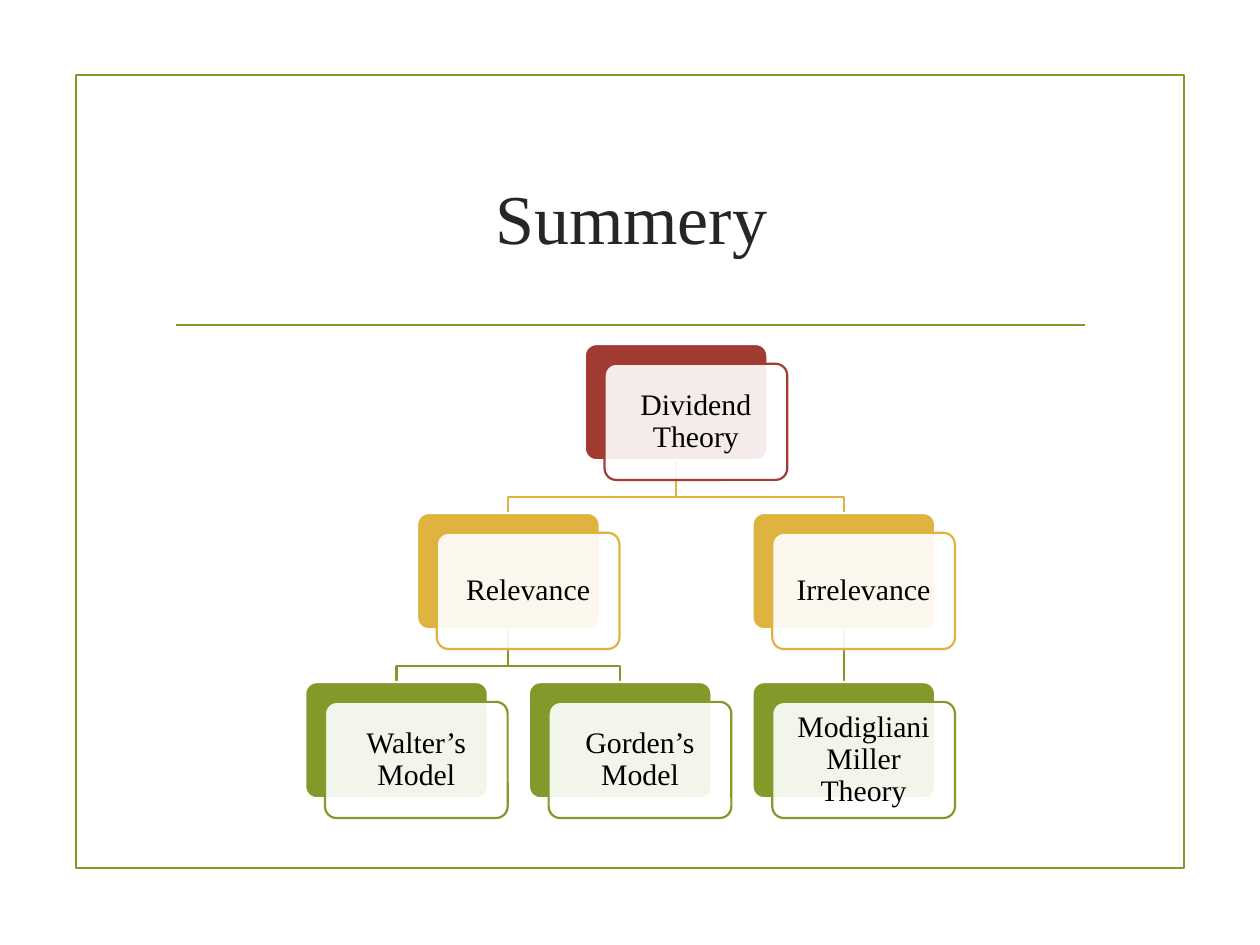
"""Build the summary slide: a tree of dividend theories under a ruled title."""
from lxml import etree
from pptx import Presentation
from pptx.dml.color import RGBColor as RGB
from pptx.enum.shapes import MSO_CONNECTOR as Line, MSO_SHAPE as Shape
from pptx.enum.text import MSO_ANCHOR as Anchor, PP_ALIGN as Align
from pptx.oxml.ns import qn
from pptx.util import Pt


class Theme:
    font = "Times New Roman"
    head, body, line = Pt(40), Pt(17), Pt(1.25)
    ink, text = RGB.from_string("262626"), RGB.from_string("000000")
    white, green = RGB.from_string("FFFFFF"), RGB.from_string("83992A")
    levels = [RGB.from_string("A23C33"), RGB.from_string("DEB340"), green]


def add_box(kind, left, top, wide, high, fill, edge):
    box = slide.shapes.add_shape(kind, Pt(left), Pt(top), Pt(wide), Pt(high))
    box.shadow.inherit = False
    if fill is None:
        box.fill.background()
    else:
        box.fill.solid()
        box.fill.fore_color.rgb = fill
    box.line.color.rgb = edge
    box.line.width = Theme.line
    return box


def add_rule(x1, y1, x2, y2):
    rule = slide.shapes.add_connector(Line.STRAIGHT, Pt(x1), Pt(y1), Pt(x2), Pt(y2))
    rule.line.color.rgb = Theme.green
    rule.line.width = Theme.line
    etree.SubElement(rule._element.spPr, qn("a:effectLst"))
    return rule


deck = Presentation()
deck.slide_width, deck.slide_height = Pt(720), Pt(540)
slide = deck.slides.add_slide(deck.slide_layouts[5])
tree = slide.shapes._spTree

title = slide.shapes.title
title.left, title.top, title.width, title.height = Pt(92.9), Pt(72), Pt(535.7), Pt(103)
title.text_frame.text = "Summery"
title.text_frame.vertical_anchor = Anchor.MIDDLE
para = title.text_frame.paragraphs[0]
para.alignment = Align.CENTER
para.font.name, para.font.size = Theme.font, Theme.head
para.font.color.rgb = Theme.ink

frame = add_box(Shape.RECTANGLE, 43.6, 42.7, 633, 453.6, None, Theme.green)
rule = add_rule(100.8, 185.8, 619.9, 185.8)

WIDE, HIGH = 104.4, 66.4
LEFT, TOP = 174.4, 196.6
COL, ROW = 127.8, 96.6
SHIFT, BEND = 11.3, 20.9

nodes = [
    ("Dividend Theory", 1.25, 0, None),
    ("Relevance", 0.5, 1, 0),
    ("Walter’s Model", 0, 2, 1),
    ("Gorden’s Model", 1, 2, 1),
    ("Irrelevance", 2, 1, 0),
    ("Modigliani Miller Theory", 2, 2, 4),
]

backs = []
for label, col, row, _ in nodes:
    tint = Theme.levels[row]
    left, top = LEFT + col * COL, TOP + row * ROW
    back = add_box(Shape.ROUNDED_RECTANGLE, left, top, WIDE, HIGH, tint, Theme.white)
    card = add_box(Shape.ROUNDED_RECTANGLE, left + SHIFT, top + SHIFT,
                   WIDE, HIGH, Theme.white, tint)
    back.adjustments[0] = card.adjustments[0] = 0.1
    color = card.fill._xPr.find(qn("a:solidFill"))[0]
    etree.SubElement(color, qn("a:alpha"), val="90000")
    backs.append(back)

    text = card.text_frame
    text.word_wrap = True
    text.vertical_anchor = Anchor.MIDDLE
    text.margin_left = text.margin_right = text.margin_top = text.margin_bottom = Pt(5)
    text.text = label
    para = text.paragraphs[0]
    para.alignment = Align.CENTER
    para.line_spacing = 0.9
    para.space_after = Pt(6)
    para.font.name, para.font.size = Theme.font, Theme.body
    para.font.color.rgb = Theme.text

for (_, col, row, up), back in zip(nodes, backs):
    if up is None:
        continue
    x1 = LEFT + nodes[up][1] * COL + WIDE / 2
    x2 = LEFT + col * COL + WIDE / 2
    y2 = TOP + row * ROW
    y1 = y2 - ROW + HIGH
    if x1 == x2:
        link = add_rule(x1, y1, x2, y2)
        link.begin_connect(backs[up], 2)
        link.end_connect(back, 0)
    else:
        pen = slide.shapes.build_freeform(Pt(x1), Pt(y1))
        bends = [(x1, y1 + BEND), (x2, y1 + BEND), (x2, y2)]
        pen.add_line_segments([(Pt(x), Pt(y)) for x, y in bends], close=False)
        link = pen.convert_to_shape()
        link.fill.background()
        link.shadow.inherit = False
    link.line.color.rgb = Theme.levels[row]
    link.line.width = Theme.line
    tree.insert(2, link._element)

for shape in (rule, frame):
    tree.insert(2, shape._element)

deck.save("out.pptx")
